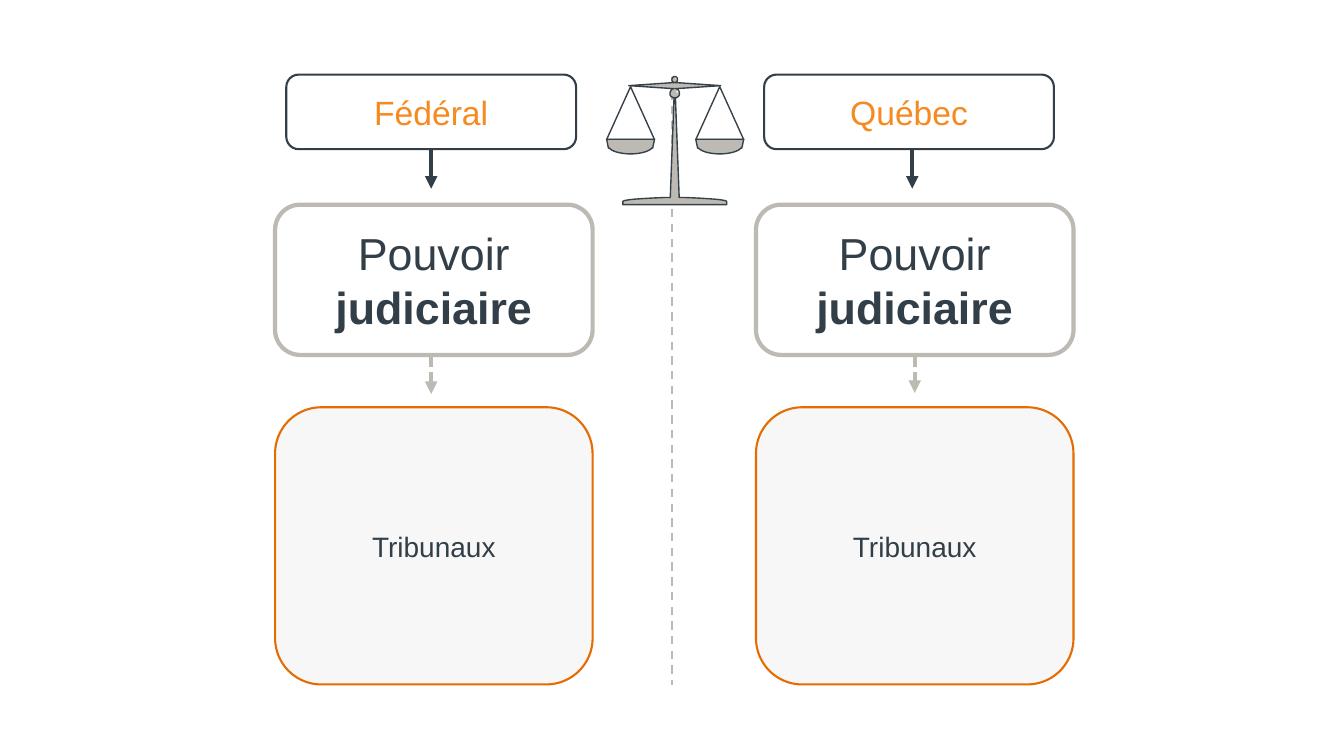
import pptx
import pptx.util
import pptx.dml.color
import pptx.enum.dml
import pptx.enum.shapes
import pptx.enum.text
import pptx.oxml
import pptx.oxml.ns

Pt = pptx.util.Pt
RGBColor = pptx.dml.color.RGBColor
SHAPE = pptx.enum.shapes.MSO_SHAPE
DASH = pptx.enum.dml.MSO_LINE

WHITE = RGBColor(0xFF, 0xFF, 0xFF)
PALE = RGBColor(0xF7, 0xF7, 0xF7)
STONE = RGBColor(0xBC, 0xBA, 0xB3)
SLATE = RGBColor(0x33, 0x3F, 0x48)
SCALE_EDGE = RGBColor(0x36, 0x42, 0x4B)
ORANGE = RGBColor(0xF6, 0x89, 0x1F)
RUST = RGBColor(0xE4, 0x6C, 0x00)

presentation = pptx.Presentation()
presentation.slide_width = Pt(960)
presentation.slide_height = Pt(540)
slide = presentation.slides.add_slide(presentation.slide_layouts[6])
shapes = slide.shapes


def paint(shape, fill, edge, width=1):
    """Set fill and outline; None leaves either one out."""
    shape.shadow.inherit = False
    for part, colour in ((shape.fill, fill), (shape.line.fill, edge)):
        if colour is None:
            part.background()
        else:
            part.solid()
            part.fore_color.rgb = colour
    if edge is not None:
        shape.line.width = Pt(width)


def add_symmetric(axis, halves):
    """Draw outlines from their right halves; six numbers make a Bézier curve."""
    builder = None
    for half in halves:
        right = [half[0]]
        for step in half[1:]:
            if len(step) == 2:
                right.append(step)
                continue
            ends = [right[-1], step[:2], step[2:4], step[4:]]
            for t in (i / 8 for i in range(1, 9)):
                weights = ((1 - t) ** 3, 3 * t * (1 - t) ** 2, 3 * t * t * (1 - t), t ** 3)
                right.append(tuple(sum(w * end[k] for w, end in zip(weights, ends))
                                   for k in (0, 1)))
        outline = right + [(-x, y) for x, y in reversed(right)]
        corners = [(Pt(axis + x), Pt(y)) for x, y in outline]
        if builder is None:
            builder = shapes.build_freeform(*corners[0])
        else:
            builder.move_to(*corners[0])
        builder.add_line_segments(corners[1:], close=True)
    paint(builder.convert_to_shape(), STONE, SCALE_EDGE)


# Divider, then the boxes of both columns
# Each link: x, top, bottom, colour, width, dash, arrowhead, box it leaves
links = [(480.2, 54.7, 489, STONE, 1.5, DASH.DASH, False, None)]
columns = [("Fédéral", 204.5, 196.5, 308, 308, 253.5),
           ("Québec", 545.8, 540, 651.6, 653.4, 252.7)]
for level, header_left, left, header_arrow, power_arrow, power_bottom in columns:
    boxes = [
        (header_left, 53.3, 207, 53.3, WHITE, SLATE, 1.5, [level], 24, ORANGE),
        (left, 146.2, 226.8, 107.3, WHITE, STONE, 3, ["Pouvoir", "judiciaire"], 32, SLATE),
        (left, 290.9, 226.8, 198, PALE, RUST, 1.5, ["Tribunaux"], 20, SLATE),
    ]
    drawn = []
    for x, y, width, height, fill, edge, weight, words, size, colour in boxes:
        box = shapes.add_shape(SHAPE.ROUNDED_RECTANGLE, Pt(x), Pt(y), Pt(width), Pt(height))
        paint(box, fill, edge, weight)
        box.text_frame.word_wrap = True
        box.text_frame.vertical_anchor = pptx.enum.text.MSO_ANCHOR.MIDDLE
        paragraph = box.text_frame.paragraphs[0]
        paragraph.alignment = pptx.enum.text.PP_ALIGN.CENTER
        for i, word in enumerate(words):
            if i:
                paragraph.add_line_break()
            run = paragraph.add_run()
            run.text = word
            run.font.name = "Arial"
            run.font.size = Pt(size)
            run.font.bold = i > 0
            run.font.color.rgb = colour
        drawn.append(box)
    header, power, courts = drawn
    links += [
        (header_arrow, 106.6, 134.8, SLATE, 3, None, True, header),
        (power_arrow, power_bottom, power_bottom + 28, STONE, 3, DASH.SQUARE_DOT, True, power),
    ]

# Divider and arrows
for x, top, bottom, colour, width, dash, arrowhead, source in links:
    link = shapes.add_connector(pptx.enum.shapes.MSO_CONNECTOR.STRAIGHT,
                                Pt(x), Pt(top), Pt(x), Pt(bottom))
    if source is not None and abs(source.left + source.width / 2 - Pt(x)) < Pt(0.5):
        link.begin_connect(source, 2)
    link.line.color.rgb = colour
    link.line.width = Pt(width)
    if dash is not None:
        link.line.dash_style = dash
    if arrowhead:
        tail = pptx.oxml.parse_xml(
            '<a:tailEnd %s type="triangle"/>' % pptx.oxml.ns.nsdecls("a"))
        link.line._get_or_add_ln().append(tail)
    link._element.spPr.append(
        pptx.oxml.parse_xml("<a:effectLst %s/>" % pptx.oxml.ns.nsdecls("a")))

# Scales: stand with beam and top knob
stand = [(0, 59), (0.5, 59), (32.8, 61.2), (0.5, 63.4), (1.2, 63.4),
         (2.6, 64.1, 3.4, 65.5, 3.4, 67), (3.4, 68.4, 2.6, 69.1, 1.2, 69.8),
         (0.5, 69.8), (3.2, 141.1), (7.6, 141.1),
         (24.1, 141.8, 37.1, 142.6, 37.1, 144), (37.1, 146.2)]
knob = [(0, 54.7), (1.2, 54.7, 2, 55.7, 2, 56.8), (2, 58, 1.2, 59, 0, 59)]
add_symmetric(482, [stand, knob])

# Scales: cords and pans
pan = [(17.1, 99.5), (15.8, 105.8), (15.1, 105.8), (13.7, 108, 7.2, 110, 0, 110)]
for axis in (450.4, 514.1):
    cords = shapes.add_shape(SHAPE.FLOWCHART_EXTRACT,
                             Pt(axis - 17.1), Pt(61.9), Pt(34.2), Pt(37.8))
    paint(cords, None, SCALE_EDGE)
    add_symmetric(axis, [pan])

# Scales: highlights on the knobs
for x, y, size in ((483.1, 64.8, 1.4), (482.4, 55.4, 0.7)):
    glint = shapes.add_shape(SHAPE.OVAL, Pt(x), Pt(y), Pt(size), Pt(size))
    paint(glint, WHITE, None)

presentation.save("out.pptx")
